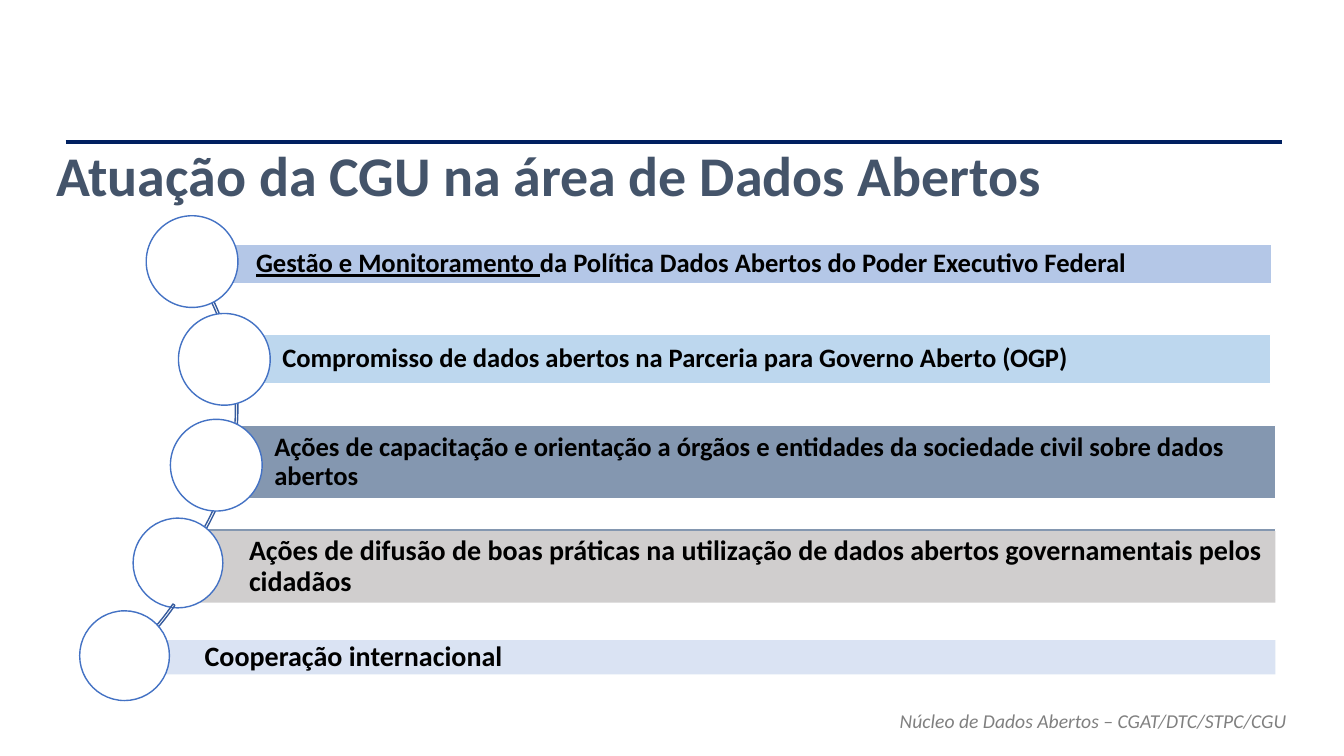
from lxml import etree
from pptx import Presentation
from pptx import util as u
from pptx.dml.color import RGBColor
from pptx.enum import shapes, text
from pptx.oxml.ns import qn

COLORS = {
    "navy": "002060", "title": "44546A", "ink": "000000", "footer": "808080",
    "white": "FFFFFF", "ring": "4472C4", "arc": "365B9D", "periwinkle": "B4C7E7",
    "sky": "BDD7EE", "slate": "8497B0", "gray": "D0CECE", "pale": "DAE3F3",
}


class SlideBuilder:
    """Hold the style and the current slide, and draw its elements."""

    font = "Calibri"

    def __init__(self, deck):
        self.page = deck.slides.add_slide(deck.slide_layouts[5])

    def color(self, name):
        return RGBColor.from_string(COLORS[name])

    def place(self, box, area):
        box.left, box.top, box.width, box.height = map(u.Inches, area)

    def add_words(self, box, parts, size, color, align=text.PP_ALIGN.LEFT, spacing=1.0,
                  bold=False, italic=False):
        para = box.text_frame.paragraphs[0]
        para.alignment = align
        para.line_spacing = spacing
        for words, underline in parts:
            span = para.add_run()
            span.text = words
            span.font.name = self.font
            span.font.size = u.Pt(size)
            span.font.bold = bold
            span.font.italic = italic
            span.font.underline = underline
            span.font.color.rgb = self.color(color)

    def frame(self, box, anchor, insets):
        frame = box.text_frame
        frame.word_wrap = True
        frame.vertical_anchor = anchor
        frame.margin_left, frame.margin_top, frame.margin_right, frame.margin_bottom = map(
            u.Inches, insets)

    def title(self, words, area):
        box = self.page.shapes.title
        self.place(box, area)
        self.frame(box, text.MSO_ANCHOR.TOP, (0.1, 0.05, 0.1, 0.05))
        box.text_frame.auto_size = text.MSO_AUTO_SIZE.SHAPE_TO_FIT_TEXT
        self.add_words(box, [(words, False)], 40, "title", bold=True)

    def footer(self, words, area):
        box = self.page.shapes.add_textbox(*map(u.Inches, area))
        self.frame(box, text.MSO_ANCHOR.TOP, (0.1, 0.05, 0.1, 0.05))
        box.text_frame.auto_size = text.MSO_AUTO_SIZE.SHAPE_TO_FIT_TEXT
        self.add_words(box, [(words, False)], 14, "footer", text.PP_ALIGN.RIGHT, italic=True)

    def rule(self, left, right, top):
        line = self.page.shapes.add_connector(
            shapes.MSO_CONNECTOR.STRAIGHT, *map(u.Inches, (left, top, right, top)))
        line.line.color.rgb = self.color("navy")
        line.line.width = u.Pt(3)
        etree.SubElement(line._element.spPr, qn("a:effectLst"))

    def shape(self, kind, area, fill=None, outline=None):
        box = self.page.shapes.add_shape(kind, *map(u.Inches, area))
        box.shadow.inherit = False
        if fill:
            box.fill.solid()
            box.fill.fore_color.rgb = self.color(fill)
        else:
            box.fill.background()
        if outline:
            box.line.color.rgb = self.color(outline)
            box.line.width = u.Pt(1)
        else:
            box.line.fill.background()
        return box

    def arc(self, left, top, size, start):
        box = self.shape(shapes.MSO_SHAPE.BLOCK_ARC, (left, top, size, size), outline="arc")
        for index, value in enumerate((start, 27, 0.005)):
            box.adjustments[index] = value

    def bar(self, area, fill, parts, size, outline=None):
        box = self.shape(shapes.MSO_SHAPE.RECTANGLE, area, fill, outline)
        self.frame(box, text.MSO_ANCHOR.MIDDLE, (0.58, 0.05, 0.05, 0.05))
        self.add_words(box, parts, size, "ink", spacing=0.9, bold=True)

    def ring(self, left, top, size):
        self.shape(shapes.MSO_SHAPE.OVAL, (left, top, size, size), "white", "ring")


def main():
    deck = Presentation()
    deck.slide_width, deck.slide_height = u.Inches(13.33), u.Inches(7.5)
    slide = SlideBuilder(deck)
    slide.rule(0.65, 12.72, 1.41)
    slide.title("Atuação da CGU na área de Dados Abertos", (0.46, 1.34, 12.42, 0.77))

    slide.arc(-2.55, 1.59, 4.91, 189)
    upper_actions = [
        ((1.96, 2.42, 10.65, 0.4), "periwinkle", (1.45, 2.14),
         [("Gestão e Monitoramento ", True),
          ("da Política Dados Abertos do Poder Executivo Federal", False)]),
        ((2.22, 3.32, 10.38, 0.49), "sky", (1.77, 3.11),
         [("Compromisso de dados abertos na Parceria para Governo Aberto (OGP)", False)]),
        ((2.14, 4.22, 10.51, 0.73), "slate", (1.69, 4.16),
         [("Ações de capacitação e orientação a órgãos e entidades da sociedade civil "
           "sobre dados abertos", False)]),
    ]
    for area, fill, ring, parts in upper_actions:
        slide.bar(area, fill, parts, 19, "white")
        slide.ring(*ring, 0.91)

    slide.shape(shapes.MSO_SHAPE.RECTANGLE, (1.89, 5.24, 10.76, 0.71), "slate", "white")
    slide.bar((1.89, 5.27, 10.76, 0.71), "gray",
              [("Ações de difusão de boas práticas na utilização de dados abertos "
                "governamentais pelos cidadãos", False)], 20)
    slide.ring(1.32, 5.14, 0.89)
    slide.bar((1.45, 6.35, 11.2, 0.34), "pale", [("Cooperação internacional", False)], 20)
    slide.arc(-2.66, 2.25, 4.81, 20.5)
    slide.ring(0.79, 6.06, 0.89)

    slide.footer("Núcleo de Dados Abertos – CGAT/DTC/STPC/CGU", (5.65, 6.98, 7.21, 0.34))
    deck.save("out.pptx")


if __name__ == "__main__":
    main()
